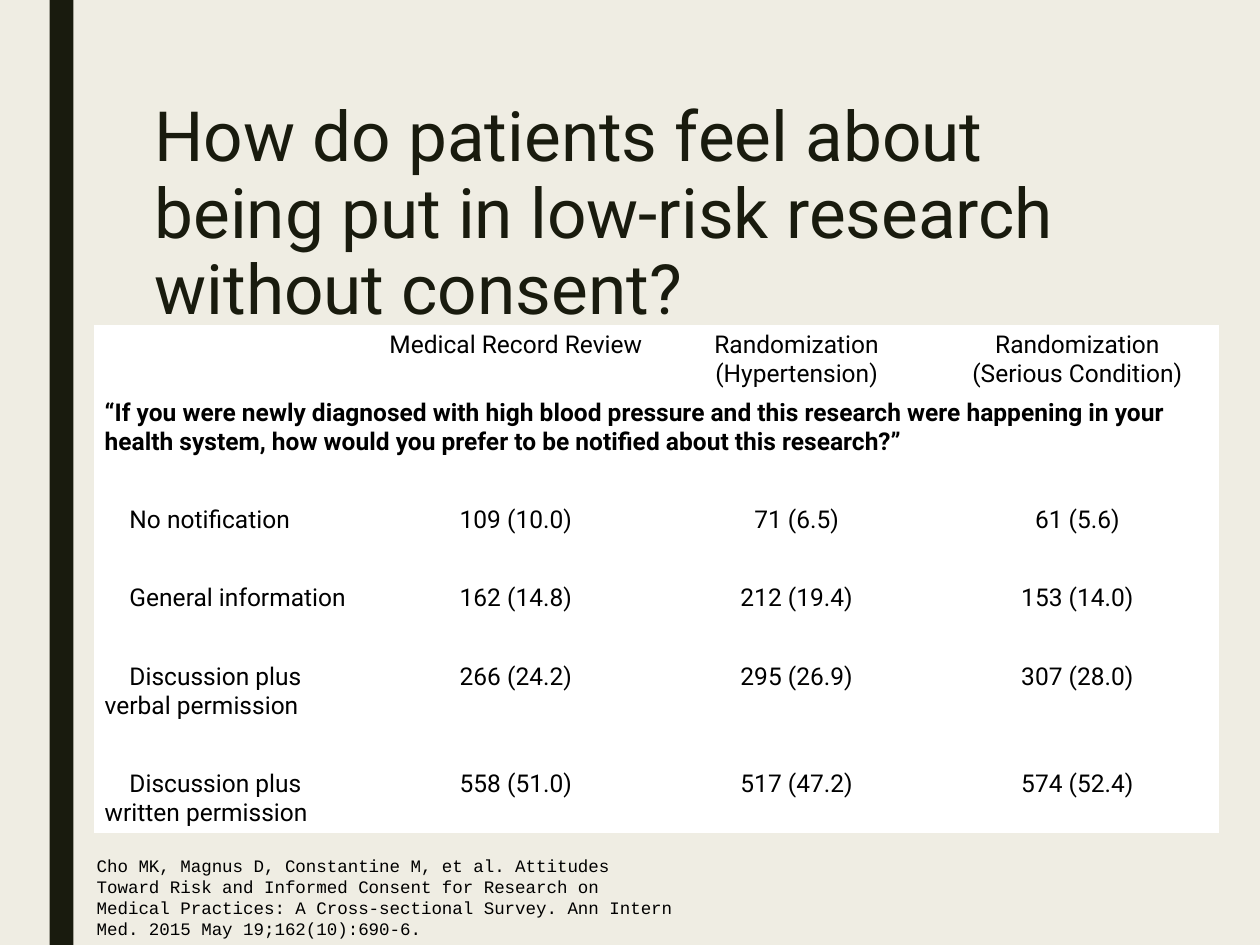
from pptx import Presentation
from pptx.dml.color import RGBColor
from pptx.enum import shapes, text
from pptx.util import Cm, Pt

# Content
TITLE = "How do patients feel about being put in low-risk research without consent?"
HEADER = ["", "Medical Record Review", "Randomization (Hypertension)",
          "Randomization (Serious Condition)"]
QUESTION = ("“If you were newly diagnosed with high blood pressure and this research were "
            "happening in your health system, how would you prefer to be notified about "
            "this research?”")
ANSWERS = [
    ["No notification", "109 (10.0)", "71 (6.5)", "61 (5.6)"],
    ["General information", "162 (14.8)", "212 (19.4)", "153 (14.0)"],
    ["Discussion plus verbal permission", "266 (24.2)", "295 (26.9)", "307 (28.0)"],
    ["Discussion plus written permission", "558 (51.0)", "517 (47.2)", "574 (52.4)"],
]
CITATION = ("Cho MK, Magnus D, Constantine M, et al. Attitudes Toward Risk and Informed "
            "Consent for Research on Medical Practices: A Cross-sectional Survey. "
            "Ann Intern Med. 2015 May 19;162(10):690-6.")

# Style
CREAM = RGBColor(0xEF, 0xED, 0xE3)
DARK = RGBColor(0x19, 0x1B, 0x0E)
WHITE = RGBColor(0xFF, 0xFF, 0xFF)
BLACK = RGBColor(0, 0, 0)
TALL_ROW, SHORT_ROW, COLUMN = Cm(1.37), Cm(0.79), Cm(5.66)
WRAP_LENGTH = 20  # longer answers take two lines


def style(para, size, name="Roboto", color=BLACK, bold=False):
    para.font.size = Pt(size)
    para.font.name = name
    para.font.color.rgb = color
    para.font.bold = bold


def place(shape, left, top, width, height):
    shape.left, shape.top, shape.width, shape.height = map(Cm, (left, top, width, height))


deck = Presentation()
deck.slide_width, deck.slide_height = Cm(25.4), Cm(19.05)
page = deck.slides.add_slide(deck.slide_layouts[5])
page.background.fill.solid()
page.background.fill.fore_color.rgb = CREAM

# Side bar
bar = page.shapes.add_shape(shapes.MSO_SHAPE.RECTANGLE, Cm(1), 0, Cm(0.48), deck.slide_height)
bar.shadow.inherit = False
bar.fill.solid()
bar.fill.fore_color.rgb = DARK
bar.line.fill.background()

# Title
title = page.shapes.title
place(title, 2.86, 1.9, 20, 4.11)
title.text_frame.text = TITLE
title.text_frame.auto_size = text.MSO_AUTO_SIZE.NONE
title.text_frame.vertical_anchor = text.MSO_ANCHOR.TOP
para = title.text_frame.paragraphs[0]
para.alignment = text.PP_ALIGN.LEFT
para.line_spacing = 0.92
style(para, 39.6, color=DARK)

# Survey table: a full-width spacer row goes before each answer
rows = [HEADER, [QUESTION]]
for answer in ANSWERS:
    rows += [[""], answer]
heights = [TALL_ROW if row in (HEADER, [QUESTION]) or len(row[0]) > WRAP_LENGTH else SHORT_ROW
           for row in rows]
columns = len(HEADER)
table = page.shapes.add_table(len(rows), columns, Cm(1.91), Cm(6.56),
                              COLUMN * columns, sum(heights)).table
table.first_row = table.horz_banding = False

for r, (row, height) in enumerate(zip(rows, heights)):
    table.rows[r].height = height
    if len(row) == 1:
        table.cell(r, 0).merge(table.cell(r, columns - 1))
    for c in range(columns):
        cell = table.cell(r, c)
        cell.fill.solid()
        cell.fill.fore_color.rgb = WHITE
        content = row[c] if c < len(row) else ""
        if not content:
            cell.margin_top = cell.margin_bottom = 0
            continue
        cell.margin_left = cell.margin_right = Cm(0.2)
        cell.margin_top = cell.margin_bottom = Cm(0.1)
        cell.text = content
        para = cell.text_frame.paragraphs[0]
        style(para, 14, bold=content == QUESTION)
        if c:
            para.alignment = text.PP_ALIGN.CENTER
        elif row in ANSWERS:
            para._p.get_or_add_pPr().set("indent", str(Cm(0.5)))

# Citation
box = page.shapes.add_textbox(Cm(1.7), Cm(17.3), Cm(12.27), Cm(1.55))
box.text_frame.word_wrap = True
box.text_frame.vertical_anchor = text.MSO_ANCHOR.MIDDLE
box.text_frame.text = CITATION
style(box.text_frame.paragraphs[0], 10, name="Courier New")

deck.save("out.pptx")
